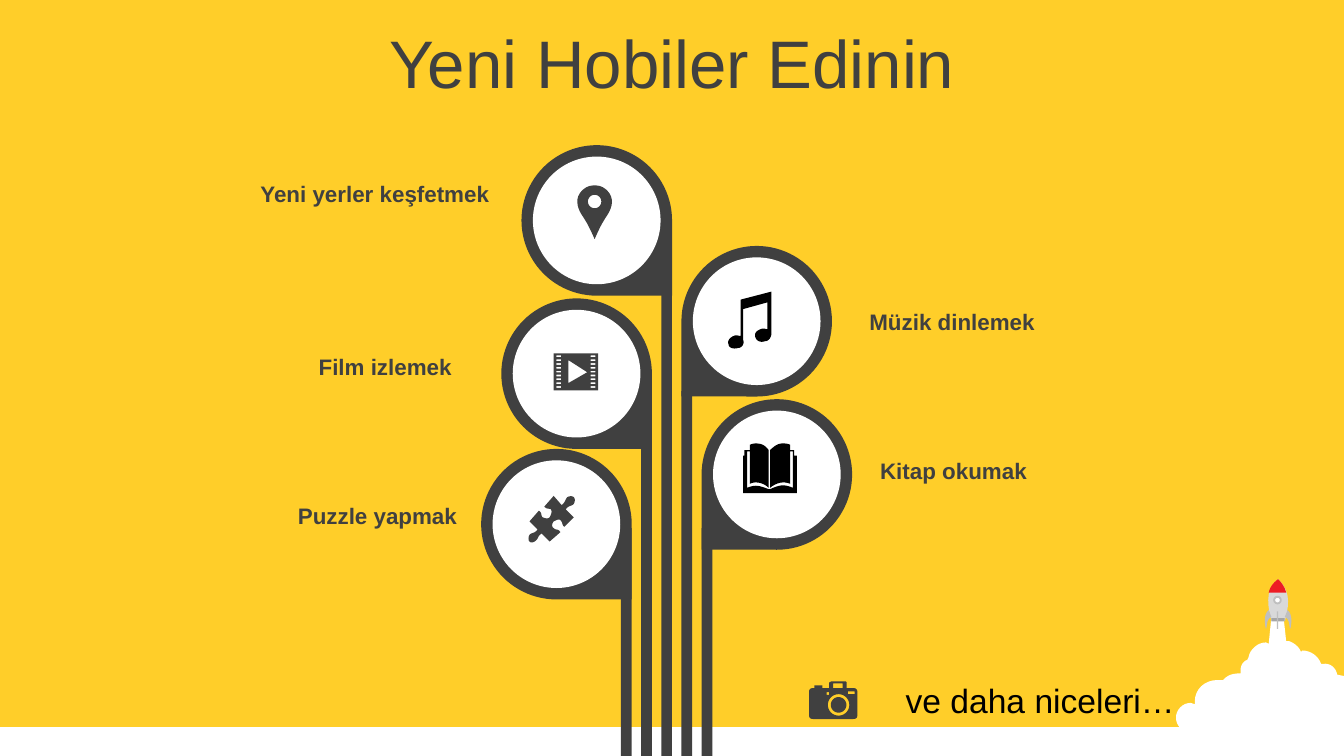
import collections
import math

import pptx
import pptx.dml.color
import pptx.enum.shapes
import pptx.enum.text
import pptx.util

RGBColor = pptx.dml.color.RGBColor
YELLOW = RGBColor(0xFF, 0xCE, 0x29)
DARK = RGBColor(0x40, 0x40, 0x40)
BLACK = RGBColor(0x00, 0x00, 0x00)
WHITE = RGBColor(0xFF, 0xFF, 0xFF)
HULL = RGBColor(0xD9, 0xD9, 0xD9)
METAL = RGBColor(0xBF, 0xBF, 0xBF)
BASE = RGBColor(0xA6, 0xA6, 0xA6)
RED = RGBColor(0xED, 0x1C, 0x24)

SHAPE = pptx.enum.shapes.MSO_SHAPE
ALIGN = pptx.enum.text.PP_ALIGN

# The slide is a grid of 1000 columns and 562.5 rows; all lengths count its cells.
COLUMNS, ROWS = 1000, 562.5
CELL = pptx.util.Inches(10) / COLUMNS

BUBBLE, RIM, STEM, STEM_PITCH, FIRST_STEM = 112, 8.5, 8, 15, 462

Hobby = collections.namedtuple(
    "Hobby", "name column top stem_top label_offset icon icon_offset icon_color")


def cells(*counts):
    return [round(count * CELL) for count in counts]


def rectangle(left, top, right, bottom):
    return f"M {left} {top} L {right} {top} {right} {bottom} {left} {bottom} "


def circle(x, y, radius, steps=32):
    angles = [2 * math.pi * step / steps for step in range(steps)]
    points = [f"{x + radius * math.cos(a):.2f} {y + radius * math.sin(a):.2f}"
              for a in angles]
    return f"M {points[0]} L {' '.join(points[1:])} "


PIN = circle(14.5, 12, 5) + (
    "M 14.5 0 C 18 0 21 1 24 4 29 9 28 16 24 22 20 28 18 32 14.5 40 "
    "11 32 9 28 5 22 1 16 0 9 5 4 8 1 11 0 14.5 0 ")
FILM = rectangle(0, 0, 33, 27.5) + "M 11 5 L 11 22 25 14 " + "".join(
    rectangle(left, 1.5 + 2.85 * row, left + 3.5, 2.8 + 2.85 * row)
    for left in (2, 27.5) for row in range(9))
PUZZLE = (
    "M 34 1 C 35 2 35 4 34 6 32 8 30 7 28 10 L 34 16 27 23 "
    "C 25 22 26 20 24 18 23 17 21 18 19 19 18 20 17 23 19 24 21 26 22 24 24 27 "
    "L 16 34 10 28 C 7 30 8 31 6 33 4 35 2 35 1 34 0 33 0 31 1 29 3 27 5 28 7 25 "
    "L 1 19 8 11 C 11 13 9 15 11 16 13 17 15 17 16 16 17 14 18 12 17 10 "
    "14 9 14 10 12 8 L 19 0 25 7 C 28 4 27 4 29 1 31 0 33 0 34 1")
MUSIC = (
    "M 33 0 L 33 31 C 33 34 31 37 28 37 25 38 22 37 21 34 20 31 22 29 25 28 "
    "27 27 29 28 30 28 L 30 8 12 13 12 36 C 13 39 11 42 8 42 5 43 1 42 1 39 "
    "0 37 2 34 5 33 7 32 8 33 10 33 L 10 6")
BOOK = (
    "M 19 34 L 20 34 C 27 31 30 30 37 33 L 37 6 35 6 35 30 C 30 28 25 29 20 33 "
    "L 20 5 C 23 2 26 0 29 0 31 0 33 0 35 1 L 35 5 38 5 38 9 40 9 40 37 0 37 "
    "0 9 1 9 1 5 5 5 5 1 C 7 0 9 0 10 0 14 0 17 2 19 5 L 19 33 "
    "C 15 29 9 28 5 30 L 5 6 3 6 3 33 C 10 30 13 32 19 34")
CAMERA = (
    "M 17 0 L 27 0 C 28 0 28 1 28 1 L 28 5 33 5 C 35 5 36 6 36 8 L 36 25 "
    "C 36 27 35 28 33 28 L 3 28 C 1 28 0 27 0 25 L 0 8 C 0 6 1 5 3 5 "
    "L 4 5 4 3 10 3 10 5 15 5 15 1 C 15 1 16 0 17 0 "
    + rectangle(18, 1.5, 25, 5) + rectangle(29, 7.5, 34, 9.5)
    + rectangle(13, 8, 15, 10) + circle(22, 17.5, 8) + circle(22, 17.5, 5.8))
CLOUD = (
    "M 71 0 L 80 0 82 18 84 18 C 87 19 90 21 92 24 L 93 26 94 25 "
    "C 100 25 106 29 108 35 L 109 35 C 115 34 119 38 120 43 L 125 44 125 101 "
    "59 102 C 48 102 42 97 38 92 30 96 19 93 18 86 17 86 14 86 11 86 "
    "5 86 0 81 0 75 0 69 5 64 11 64 L 14 65 14 63 C 14 54 21 47 31 47 "
    "L 35 47 36 46 C 39 43 43 42 48 42 L 48 40 C 48 36 50 33 53 32 L 54 30 "
    "C 55 24 61 19 67 19 L 69 20")
ROCKET_HULL = "M 6 31 C 4 22 0 9 11 0 22 10 18 23 16 31"
ROCKET_NOSE = "M 11 0 C 14 3 16 6 17 10 L 4 10 C 5 6 7 3 11 0"
ROCKET_FINS = (
    "M 4 23 L 6 28 C 2 30 3 35 2 37 1 34 0 26 4 23 "
    "M 18 23 L 16 28 C 20 30 19 35 20 37 21 34 22 26 18 23")

HOBBIES = [
    Hobby("Yeni yerler keşfetmek", 2, 108, 208, (-292, 21), PIN, (40, 30), DARK),
    Hobby("Film izlemek", 1, 222, 291, (-305, 36), FILM, (39, 41), DARK),
    Hobby("Puzzle yapmak", 0, 334, 393, (-286, 35), PUZZLE, (35, 35), DARK),
    Hobby("Müzik dinlemek", 3, 183, 291, (130, 41), MUSIC, (34, 34), BLACK),
    Hobby("Kitap okumak", 4, 297, 393, (123, 38), BOOK, (31, 33), BLACK),
]


def trace(path):
    """Turn M, L and C commands into contours of points, sampling the curves."""
    contours, pending, command = [], [], "M"
    for token in path.split():
        if token in "MLC":
            command = token
            continue
        pending.append(float(token))
        if len(pending) < (6 if command == "C" else 2):
            continue
        points = list(zip(pending[::2], pending[1::2]))
        pending = []
        if command == "M":
            contours.append(points)
        elif command == "L":
            contours[-1] += points
        else:
            corners = list(zip(*([contours[-1][-1]] + points)))
            for step in range(1, 9):
                t = step / 8
                weights = ((1 - t) ** 3, 3 * t * (1 - t) ** 2, 3 * t * t * (1 - t), t ** 3)
                contours[-1].append(tuple(
                    sum(w * value for w, value in zip(weights, axis)) for axis in corners))
    return contours


def paint(shape, color):
    shape.shadow.inherit = False
    shape.fill.solid()
    shape.fill.fore_color.rgb = color
    shape.line.fill.background()
    return shape


def add_preset(slide, kind, box, color):
    return paint(slide.shapes.add_shape(kind, *cells(*box)), color)


def add_outline(slide, left, top, path, color):
    contours = [[cells(left + x, top + y) for x, y in contour] for contour in trace(path)]
    builder = slide.shapes.build_freeform(*contours[0][0])
    for index, contour in enumerate(contours):
        if index:
            builder.move_to(*contour[0])
        builder.add_line_segments(contour[1:], close=True)
    return paint(builder.convert_to_shape(), color)


def write(shape, text, size, color, align, bold=False):
    shape.text_frame.text = text
    para = shape.text_frame.paragraphs[0]
    para.alignment = align
    font = para.runs[0].font
    font.name, font.size, font.bold = "Arial", pptx.util.Pt(size), bold
    font.color.rgb = color


def add_label(slide, box, text, size, color, align, bold=False, wrap=True):
    label = slide.shapes.add_textbox(*cells(*box))
    label.text_frame.word_wrap = wrap
    write(label, text, size, color, align, bold)


def add_rocket(slide, left, top):
    add_outline(slide, left, top, ROCKET_HULL, HULL)
    add_preset(slide, SHAPE.RECTANGLE, (left + 6, top + 29, 10, 2.5), BASE)
    add_outline(slide, left, top, ROCKET_NOSE, RED)
    window = add_preset(slide, SHAPE.OVAL, (left + 8, top + 13, 5, 5), WHITE)
    window.line.color.rgb = METAL
    window.line.width = pptx.util.Pt(1)
    add_preset(slide, SHAPE.RECTANGLE, (left + 10, top + 24, 1, 13), METAL)
    add_outline(slide, left, top, ROCKET_FINS, METAL)


def add_hobby(slide, hobby):
    """Place a bubble on its stem, with the icon inside and the label beside it."""
    on_left = hobby.column < 3
    stem_left = FIRST_STEM + STEM_PITCH * hobby.column
    left = stem_left + STEM - BUBBLE if on_left else stem_left
    drop = add_preset(slide, SHAPE.TEAR, (left, hobby.top, BUBBLE, BUBBLE), DARK)
    drop.rotation = 90 if on_left else 180
    inner = BUBBLE - 2 * RIM
    add_preset(slide, SHAPE.OVAL, (left + RIM, hobby.top + RIM, inner, inner), WHITE)
    add_preset(slide, SHAPE.RECTANGLE,
               (stem_left, hobby.stem_top, STEM, ROWS - hobby.stem_top), DARK)
    across, down = hobby.icon_offset
    add_outline(slide, left + across, hobby.top + down, hobby.icon, hobby.icon_color)
    across, down = hobby.label_offset
    add_label(slide, (left + across, hobby.top + down, 278, 30), hobby.name, 12, DARK,
              ALIGN.RIGHT if on_left else ALIGN.LEFT, bold=True)


def main():
    deck = pptx.Presentation()
    deck.slide_width, deck.slide_height = cells(COLUMNS, ROWS)
    slide = deck.slides.add_slide(deck.slide_layouts[5])
    slide.background.fill.solid()
    slide.background.fill.fore_color.rgb = YELLOW

    title = slide.shapes.title
    title.left, title.top, title.width, title.height = cells(0, 14, COLUMNS, 63)
    title.text_frame.vertical_anchor = pptx.enum.text.MSO_ANCHOR.MIDDLE
    write(title, "Yeni Hobiler Edinin", 36, DARK, ALIGN.CENTER)

    add_preset(slide, SHAPE.RECTANGLE, (0, 541, COLUMNS, ROWS - 541), WHITE)
    add_outline(slide, 875, 459, CLOUD, WHITE)
    add_rocket(slide, 940, 431)
    for hobby in HOBBIES:
        add_hobby(slide, hobby)
    add_outline(slide, 602, 507, CAMERA, DARK)
    add_label(slide, (664, 501, 225, 40), "ve daha niceleri…", 18, BLACK,
              ALIGN.LEFT, wrap=False)
    deck.save("out.pptx")


if __name__ == "__main__":
    main()
